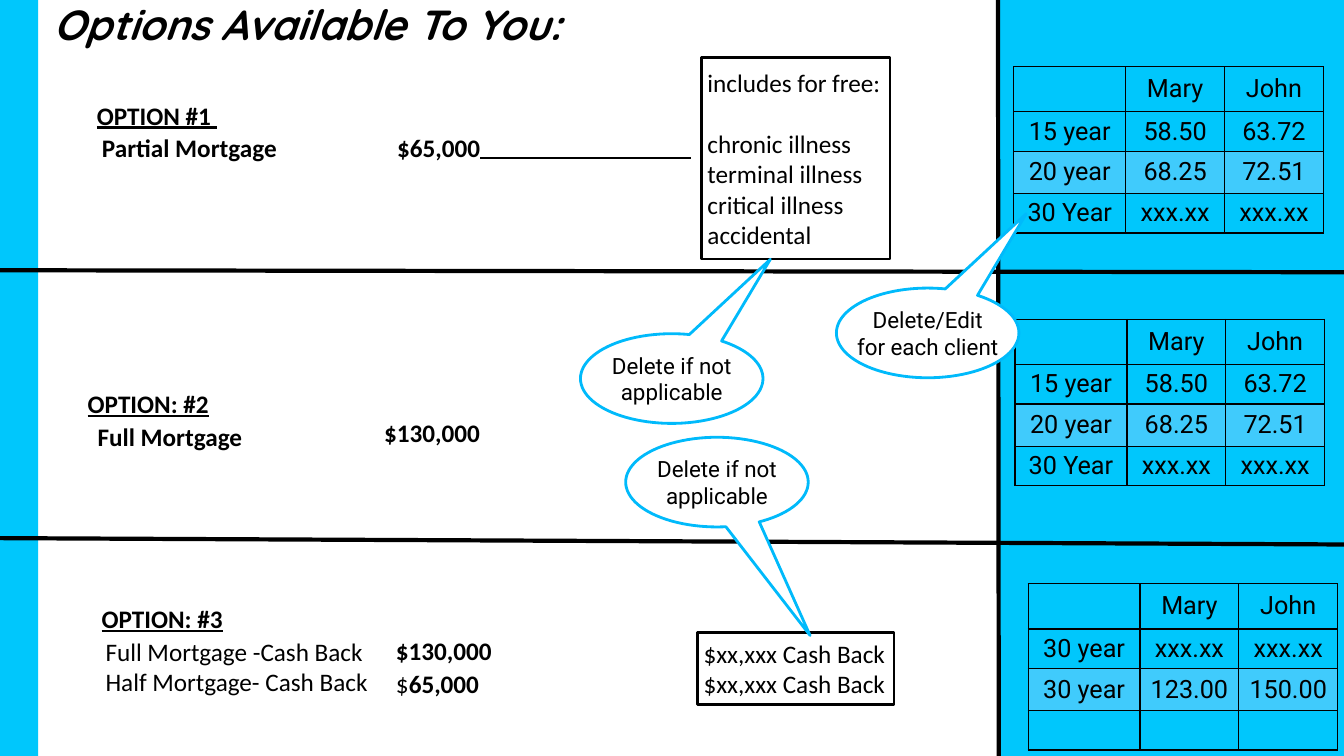
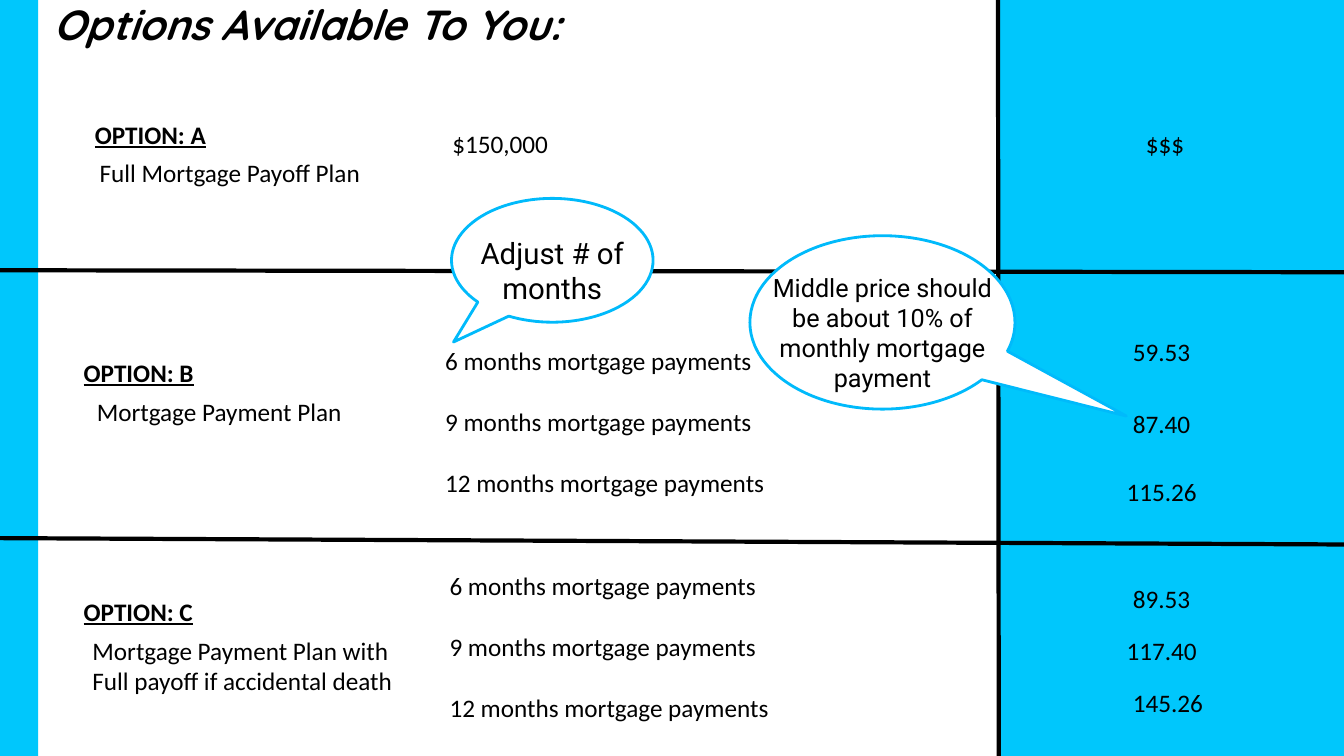
from dataclasses import dataclass

from lxml import etree
from pptx import Presentation
from pptx import util as u
from pptx.dml.color import RGBColor
from pptx.enum import shapes, text
from pptx.oxml import ns


@dataclass(frozen=True)
class Theme:
    cyan: str = "00C7FC"
    row_tint: str = "40CBFC"
    callout_edge: str = "00BAFB"
    white: str = "FFFFFF"
    black: str = "000000"
    title_font: str = "Quicksand"
    body_font: str = "Calibri"
    note_font: str = "Roboto"
    title_size: int = 30
    body_size: int = 18
    note_size: int = 16
    blank_line: int = 22
    rule: float = 3
    edge: float = 2
    grid: float = 1
    inset: float = 0.15


THEME = Theme()
SLIDE_W, SLIDE_H = 33.87, 19.05


@dataclass(frozen=True)
class Label:
    x: float
    y: float
    lines: tuple[str, ...]
    width: float = 3.8
    bold: bool = False
    underline: bool = False
    gaps: tuple[int, ...] = ()
    plain_prefix: str = ""

    @property
    def height(self) -> float:
        return 0.17 + 0.805 * (len(self.lines) + len(self.gaps))


@dataclass(frozen=True)
class Benefit:
    x: float
    y: float
    width: float
    height: float
    lines: tuple[str, ...]
    gaps: tuple[int, ...] = ()


@dataclass(frozen=True)
class Callout:
    x: float
    y: float
    width: float
    height: float
    tip: tuple[float, float]
    lines: tuple[str, ...]
    size: int = THEME.note_size
    drop: float = 0


@dataclass(frozen=True)
class RateTable:
    x: float
    y: float
    rows: tuple[tuple[str, str, str], ...]


@dataclass(frozen=True)
class Rule:
    x1: float
    y1: float
    x2: float
    y2: float
    weight: float = THEME.rule


def rgb(value: str) -> RGBColor:
    return RGBColor.from_string(value)


def write(paragraph, content: str, *, font=THEME.body_font, size=THEME.body_size,
          bold=False, italic=False, underline=False) -> None:
    run = paragraph.add_run()
    run.text = content
    run.font.name = font
    run.font.size = u.Pt(size)
    run.font.bold = bold
    run.font.italic = italic
    run.font.underline = underline
    run.font.color.rgb = rgb(THEME.black)


def fill_frame(frame, lines, *, gaps=(), align=text.PP_ALIGN.LEFT, wrap=True,
               plain_prefix="", drop=0.0, **style) -> None:
    frame.word_wrap = wrap
    frame.vertical_anchor = text.MSO_ANCHOR.MIDDLE
    frame.margin_left = u.Cm(THEME.inset if wrap else 0)
    frame.margin_right = frame.margin_bottom = u.Cm(0)
    frame.margin_top = u.Cm(2 * drop)
    for index, line in enumerate(lines):
        paragraph = frame.add_paragraph() if index else frame.paragraphs[0]
        paragraph.alignment = align
        if index in gaps:
            paragraph.space_before = u.Pt(THEME.blank_line)
        if plain_prefix:
            write(paragraph, plain_prefix)
        write(paragraph, line, **style)


def add_outline(slide, preset, x: float, y: float, width: float, height: float,
                fill: str | None = None, line: str | None = None):
    shape = slide.shapes.add_shape(preset, u.Cm(x), u.Cm(y), u.Cm(width), u.Cm(height))
    shape.shadow.inherit = False
    if fill:
        shape.fill.solid()
        shape.fill.fore_color.rgb = rgb(fill)
    else:
        shape.fill.background()
    if line:
        shape.line.color.rgb = rgb(line)
        shape.line.width = u.Pt(THEME.edge)
    else:
        shape.line.fill.background()
    return shape


def add_rule(slide, rule: Rule) -> None:
    line = slide.shapes.add_connector(
        shapes.MSO_CONNECTOR.STRAIGHT,
        u.Cm(rule.x1), u.Cm(rule.y1), u.Cm(rule.x2), u.Cm(rule.y2))
    line.line.color.rgb = rgb(THEME.black)
    line.line.width = u.Pt(rule.weight)
    properties = line._element.find(ns.qn("p:spPr"))
    etree.SubElement(properties, ns.qn("a:effectLst"))


def add_label(slide, label: Label, **style) -> None:
    box = slide.shapes.add_textbox(
        u.Cm(label.x), u.Cm(label.y), u.Cm(label.width), u.Cm(label.height))
    fill_frame(box.text_frame, label.lines, gaps=label.gaps, plain_prefix=label.plain_prefix,
               bold=label.bold, underline=label.underline, **style)


def add_benefit(slide, benefit: Benefit) -> None:
    box = add_outline(slide, shapes.MSO_SHAPE.RECTANGLE, benefit.x, benefit.y,
                      benefit.width, benefit.height, line=THEME.black)
    fill_frame(box.text_frame, benefit.lines, gaps=benefit.gaps)


def add_callout(slide, callout: Callout) -> None:
    bubble = add_outline(slide, shapes.MSO_SHAPE.OVAL_CALLOUT, callout.x, callout.y,
                         callout.width, callout.height, THEME.white, THEME.callout_edge)
    bubble.adjustments[0], bubble.adjustments[1] = callout.tip
    fill_frame(bubble.text_frame, callout.lines, align=text.PP_ALIGN.CENTER, wrap=False,
               drop=callout.drop, font=THEME.note_font, size=callout.size)


def border_cell(cell) -> None:
    properties = cell._tc.get_or_add_tcPr()
    for index, side in enumerate(("lnL", "lnR", "lnT", "lnB")):
        line = etree.Element(ns.qn(f"a:{side}"), w=str(u.Pt(THEME.grid)))
        solid = etree.SubElement(line, ns.qn("a:solidFill"))
        etree.SubElement(solid, ns.qn("a:srgbClr"), val=THEME.black)
        properties.insert(index, line)


def add_rates(slide, rates: RateTable) -> None:
    widths = (2.82, 2.49, 2.49)
    heights = (1.14, 0.99, 1.07, 0.99)
    tinted_row = 2
    table = slide.shapes.add_table(
        len(heights), len(widths), u.Cm(rates.x), u.Cm(rates.y),
        u.Cm(sum(widths)), u.Cm(sum(heights))).table
    table.first_row = table.horz_banding = False
    for column, width in zip(table.columns, widths):
        column.width = u.Cm(width)
    for index, (row, height, values) in enumerate(zip(table.rows, heights, rates.rows)):
        row.height = u.Cm(height)
        for cell, value in zip(row.cells, values):
            cell.margin_left = cell.margin_right = u.Cm(0)
            cell.margin_top = cell.margin_bottom = u.Cm(0)
            cell.vertical_anchor = text.MSO_ANCHOR.MIDDLE
            if index == tinted_row:
                cell.fill.solid()
                cell.fill.fore_color.rgb = rgb(THEME.row_tint)
            else:
                cell.fill.background()
            border_cell(cell)
            if value:
                paragraph = cell.text_frame.paragraphs[0]
                paragraph.alignment = text.PP_ALIGN.CENTER
                write(paragraph, value, font=THEME.note_font)


def add_options_slide(deck):
    slide = deck.slides.add_slide(deck.slide_layouts[6])
    for left, right in ((25.15, SLIDE_W), (0, 0.96)):
        add_outline(slide, shapes.MSO_SHAPE.RECTANGLE, left, 0, right - left, SLIDE_H,
                    THEME.cyan)
    add_label(slide, Label(1.19, 0.12, ("Options Available To You:",), 16, bold=True),
              font=THEME.title_font, size=THEME.title_size, italic=True)
    for rule in (Rule(0, 6.81, SLIDE_W, 6.86), Rule(0, 13.56, SLIDE_W, 13.72),
                 Rule(25.15, 0, 25.17, SLIDE_H)):
        add_rule(slide, rule)
    return slide


def heading(x: float, y: float, name: str) -> Label:
    return Label(x, y, (name,), bold=True, underline=True)


def months(x: float, y: float) -> Label:
    lines = tuple(f"{count} months mortgage payments" for count in (6, 9, 12))
    return Label(x, y, lines, 8.6, gaps=(1, 2))


CLIENTS = ("", "Mary", "John")
TERM_RATES = (CLIENTS, ("15 year", "58.50", "63.72"), ("20 year", "68.25", "72.51"),
              ("30 Year", "xxx.xx", "xxx.xx"))
CASH_BACK_RATES = (CLIENTS, ("30 year", "xxx.xx", "xxx.xx"),
                   ("30 year", "123.00", "150.00"), ("", "", ""))
DELETE_NOTE = ("Delete if not", "applicable")

COVERAGE = (
    heading(2.29, 2.41, "OPTION #1 "),
    Label(2.42, 3.23, ("Partial Mortgage",), 6, bold=True),
    Label(9.86, 3.23, ("$65,000",), bold=True),
    heading(2.06, 9.67, "OPTION: #2"),
    Label(9.53, 10.41, ("$130,000",), bold=True),
    Label(2.31, 10.52, ("Full Mortgage",), 6, bold=True),
    heading(2.41, 15.09, "OPTION: #3"),
    Label(9.83, 15.9, ("$130,000",), bold=True),
    Label(2.51, 15.9, ("Full Mortgage -Cash Back", "Half Mortgage- Cash Back"), 7.2),
    Label(9.83, 16.74, ("65,000",), bold=True, plain_prefix="$"),
)
BENEFITS = (
    Benefit(17.68, 1.45, 4.75, 5.08,
            ("includes for free:", "chronic illness", "terminal illness",
             "critical illness", "accidental"), gaps=(1,)),
    Benefit(17.58, 15.93, 4.95, 1.83, ("$xx,xxx Cash Back",) * 2),
)
RATES = (
    RateTable(25.55, 1.68, TERM_RATES),
    RateTable(25.58, 8.05, TERM_RATES),
    RateTable(25.91, 14.71, CASH_BACK_RATES),
)
COVERAGE_NOTES = (
    Callout(14.63, 8.41, 4.6, 2.26, (0.54, -1.33), DELETE_NOTE),
    Callout(15.77, 11.02, 4.6, 2.26, (0.51, 1.71), DELETE_NOTE),
    Callout(21.08, 7.26, 4.6, 2.26, (0.54, -1.33), ("Delete/Edit", "for each client")),
)
PAYMENTS = (
    heading(2.24, 2.9, "OPTION: A"),
    Label(2.36, 3.86, ("Full Mortgage Payoff Plan",), 7.5),
    Label(11.25, 3.12, ("$150,000",)),
    Label(28.73, 3.12, ("$$$",)),
    heading(1.96, 8.89, "OPTION: B"),
    Label(2.29, 9.88, ("Mortgage Payment Plan",), 7.5),
    months(11.07, 8.53),
    Label(28.4, 8.36, ("59.53",)),
    Label(28.4, 10.19, ("87.40",)),
    Label(28.24, 11.89, ("115.26",)),
    heading(1.96, 14.91, "OPTION: C"),
    Label(2.18, 15.88, ("Mortgage Payment Plan with", "Full payoff if accidental death"), 8.6),
    months(11.18, 14.2),
    Label(28.4, 14.58, ("89.53",)),
    Label(28.24, 15.9, ("117.40",)),
    Label(28.4, 17.22, ("145.26",)),
)
PAYMENT_NOTES = (
    Callout(11.38, 5, 5.08, 3.12, (-0.49, 0.66), ("Adjust # of", "months"), 21, 0.25),
    Callout(18.9, 5.94, 6.68, 4.37, (0.92, 0.54),
            ("Middle price should", "be about 10% of", "monthly mortgage", "payment"),
            18, 0.25),
)


def main() -> None:
    deck = Presentation()
    deck.slide_width, deck.slide_height = u.Cm(SLIDE_W), u.Cm(SLIDE_H)

    coverage = add_options_slide(deck)
    add_rule(coverage, Rule(12.1, 3.98, 17.41, 3.98, THEME.edge))
    payments = add_options_slide(deck)
    for slide, labels in ((coverage, COVERAGE), (payments, PAYMENTS)):
        for label in labels:
            add_label(slide, label)
    for benefit in BENEFITS:
        add_benefit(coverage, benefit)
    for rates in RATES:
        add_rates(coverage, rates)
    for slide, notes in ((coverage, COVERAGE_NOTES), (payments, PAYMENT_NOTES)):
        for note in notes:
            add_callout(slide, note)

    deck.save("out.pptx")


if __name__ == "__main__":
    main()
